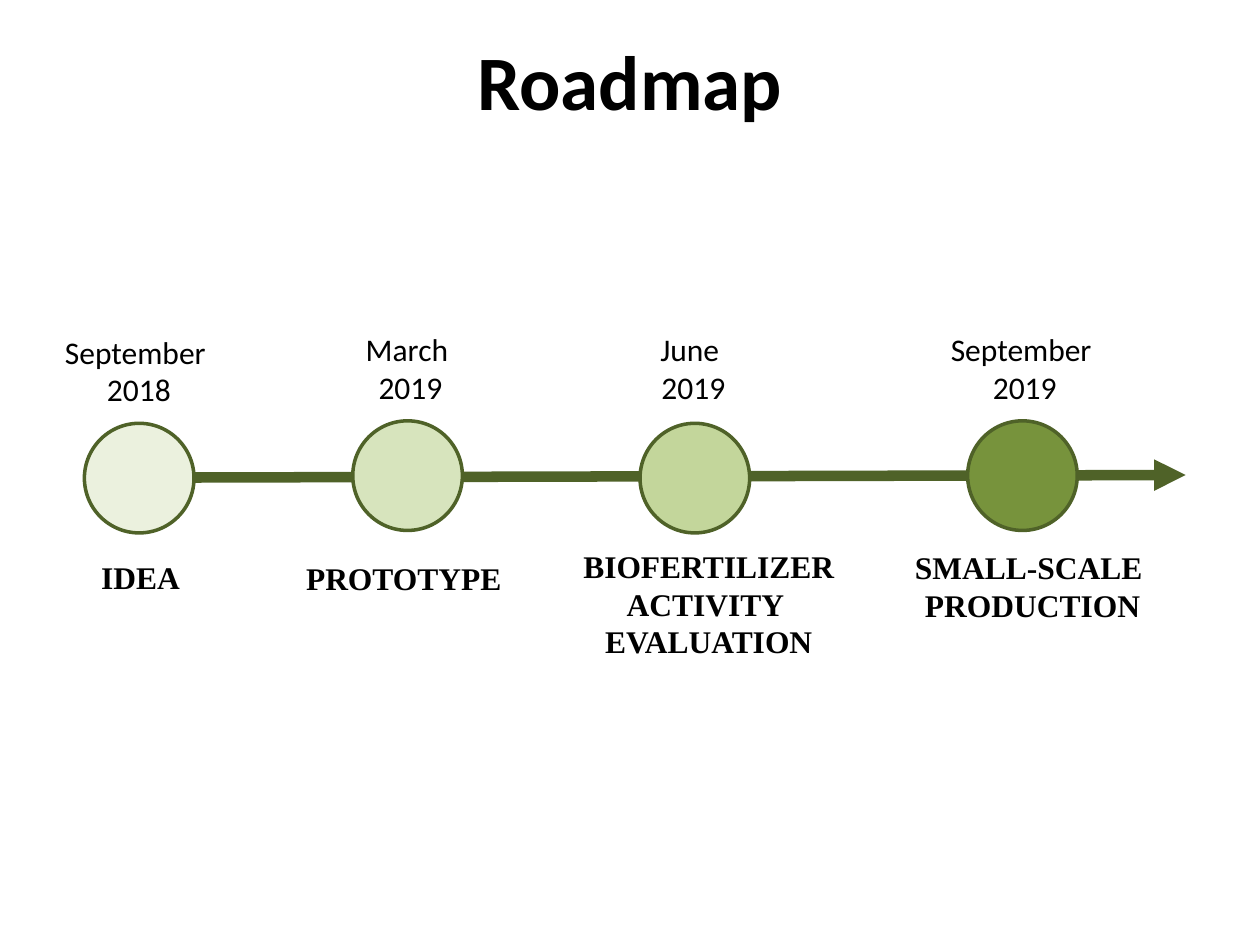
from pptx import Presentation
from pptx.dml.color import RGBColor
from pptx.enum import shapes, text
from pptx.oxml.ns import qn
from pptx.util import Inches, Pt
from lxml import etree

COLORS = {
    "text": "000000",
    "outline": "4F6228",
    "idea": "EBF1DE",
    "prototype": "D7E4BD",
    "evaluation": "C3D69B",
    "production": "77933C",
}

# Date box: left, width. Stage box: left, top, width, height, wrap.
MILESTONES = [
    dict(color="idea", circle=(0.67, 3.36), date=["September", " 2018"],
         date_box=(0.41, 1.33), stage=["IDEA"],
         stage_box=(0.7, 4.38, 0.83, 0.4), wrap=False),
    dict(color="prototype", circle=(2.8, 3.34), date=["March", " 2019"],
         date_box=(2.8, 0.86), stage=["PROTOTYPE"],
         stage_box=(2.32, 4.39, 1.77, 0.4), wrap=False),
    dict(color="evaluation", circle=(5.08, 3.36), date=["June", " 2019"],
         date_box=(5.09, 0.77), stage=["BIOFERTILIZER ACTIVITY ", "EVALUATION"],
         stage_box=(3.98, 4.29, 3.29, 1.01), wrap=True),
    dict(color="production", circle=(7.68, 3.34), date=["September", " 2019"],
         date_box=(7.44, 1.33), stage=["SMALL-SCALE ", "PRODUCTION"],
         stage_box=(7.15, 4.3, 2.09, 0.71), wrap=False),
]
DIAMETER = 0.87
DATE_TOP, DATE_HEIGHT = 2.57, 0.71
ARROW_START, ARROW_END = (1.54, 3.79), (9.41, 3.77)


def rgb(name):
    return RGBColor.from_string(COLORS[name])


def add_text(slide, lines, box, size=18, font="Calibri", bold=False,
             wrap=False, anchor=text.MSO_ANCHOR.TOP):
    frame = slide.shapes.add_textbox(*map(Inches, box)).text_frame
    frame.word_wrap = wrap
    frame.vertical_anchor = anchor
    for i, line in enumerate(lines):
        paragraph = frame.add_paragraph() if i else frame.paragraphs[0]
        paragraph.alignment = text.PP_ALIGN.CENTER
        run = paragraph.add_run()
        run.text = line
        run.font.name = font
        run.font.size = Pt(size)
        run.font.bold = bold
        run.font.color.rgb = rgb("text")


def add_arrow(slide, start, end):
    arrow = slide.shapes.add_connector(
        shapes.MSO_CONNECTOR.STRAIGHT, *map(Inches, start + end))
    arrow.line.color.rgb = rgb("outline")
    arrow.line.width = Pt(6)
    line = arrow.line._get_or_add_ln()
    etree.SubElement(line, qn("a:tailEnd"), type="triangle")
    etree.SubElement(arrow._element.spPr, qn("a:effectLst"))


def add_circle(slide, left, top, color):
    circle = slide.shapes.add_shape(
        shapes.MSO_SHAPE.OVAL, *map(Inches, (left, top, DIAMETER, DIAMETER)))
    circle.shadow.inherit = False
    circle.fill.solid()
    circle.fill.fore_color.rgb = rgb(color)
    circle.line.color.rgb = rgb("outline")
    circle.line.width = Pt(2)


def main():
    prs = Presentation()
    prs.slide_width, prs.slide_height = Inches(10), Inches(7.5)
    slide = prs.slides.add_slide(prs.slide_layouts[6])

    # Time arrow, behind the circles
    add_arrow(slide, ARROW_START, ARROW_END)

    # Title
    add_text(slide, ["Roadmap"], (0.5, 0.01, 9, 1.25), size=44, bold=True,
             wrap=True, anchor=text.MSO_ANCHOR.MIDDLE)

    # Milestones: circle, date above, stage below
    first_date_drop = 0.02
    for i, item in enumerate(MILESTONES):
        add_circle(slide, *item["circle"], item["color"])
        left, width = item["date_box"]
        top = DATE_TOP if i else DATE_TOP + first_date_drop
        add_text(slide, item["date"], (left, top, width, DATE_HEIGHT))
        add_text(slide, item["stage"], item["stage_box"],
                 font="Times New Roman", bold=True, wrap=item["wrap"])

    prs.save("out.pptx")


if __name__ == "__main__":
    main()
